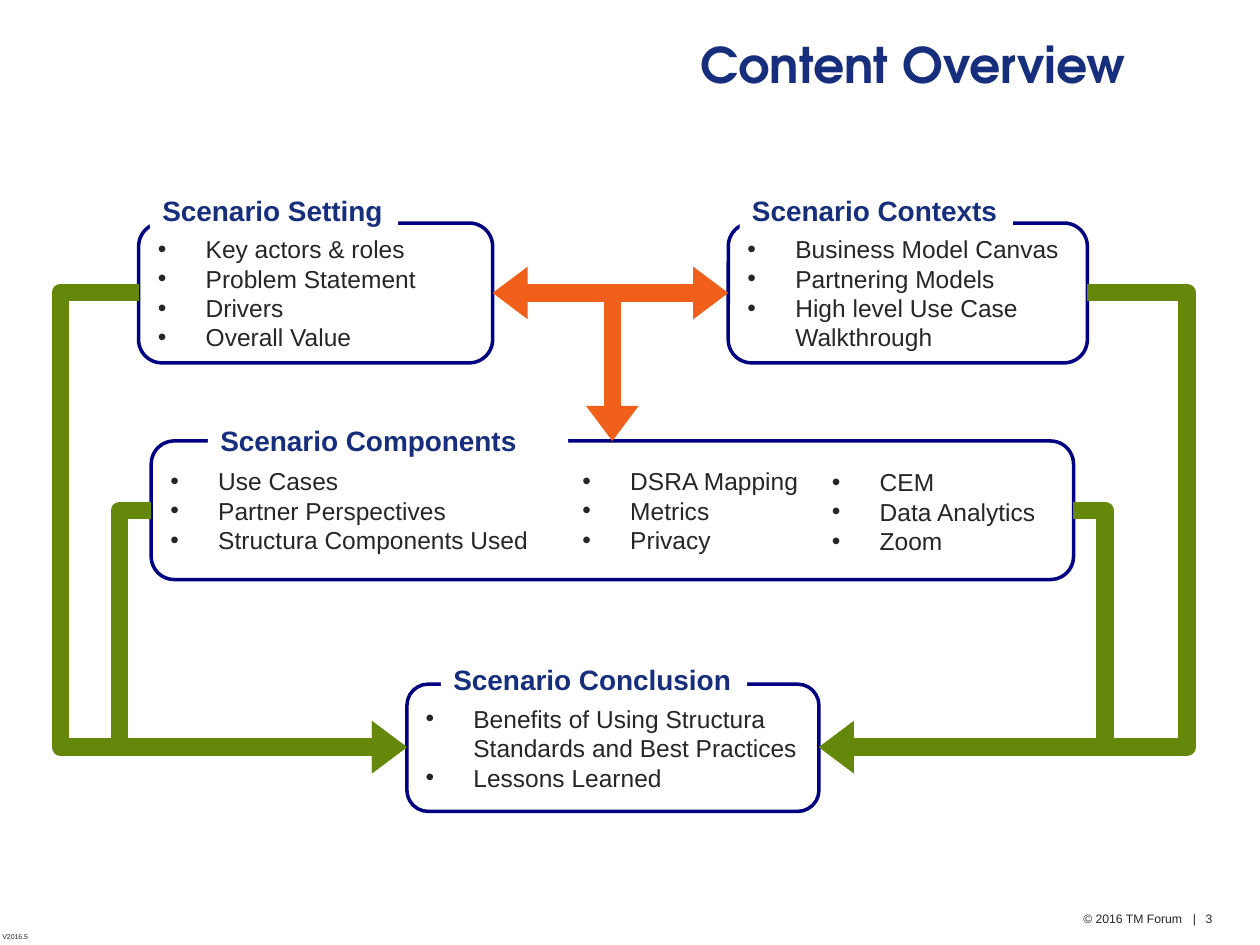
import pptx
import pptx.dml.color
import pptx.enum.shapes
import pptx.enum.text
import pptx.oxml
import pptx.oxml.ns
import pptx.util

Inches = pptx.util.Inches
Pt = pptx.util.Pt
MSO_SHAPE = pptx.enum.shapes.MSO_SHAPE
MSO_CONNECTOR = pptx.enum.shapes.MSO_CONNECTOR
PP_ALIGN = pptx.enum.text.PP_ALIGN
MSO_ANCHOR = pptx.enum.text.MSO_ANCHOR

COLORS = {
    "title": "172E7D",
    "text": "262626",
    "border": "000080",
    "panel": "FFFFFF",
    "flow": "65880A",
    "link": "F0601A",
}


def rgb(name):
    return pptx.dml.color.RGBColor.from_string(COLORS[name])


def add_xml(parent, xml):
    parent.append(pptx.oxml.parse_xml(xml.replace(">", f" {pptx.oxml.ns.nsdecls('a')}>", 1)))


def add_run(p, text, size, color="text", bold=False, font="Arial"):
    r = p.add_run()
    r.text = text
    r.font.size = Pt(size)
    r.font.name = font
    r.font.bold = bold
    r.font.color.rgb = rgb(color)


def add_text(s, box, text, size, align=PP_ALIGN.LEFT, anchor=MSO_ANCHOR.TOP, wrap=True, **style):
    sp = s.shapes.add_textbox(*map(Inches, box))
    tf = sp.text_frame
    tf.word_wrap = wrap
    tf.vertical_anchor = anchor
    p = tf.paragraphs[0]
    p.alignment = align
    add_run(p, text, size, **style)
    return sp


def add_bullets(s, box, items, framed=True):
    sp = s.shapes.add_shape(MSO_SHAPE.ROUNDED_RECTANGLE, *map(Inches, box))
    sp.shadow.inherit = False
    if framed:
        sp.fill.solid()
        sp.fill.fore_color.rgb = rgb("panel")
        sp.line.color.rgb = rgb("border")
        sp.line.width = Pt(2)
    else:
        sp.fill.background()
        sp.line.fill.background()
    tf = sp.text_frame
    tf.word_wrap = True
    tf.vertical_anchor = MSO_ANCHOR.MIDDLE
    for i, item in enumerate(items):
        p = tf.add_paragraph() if i else tf.paragraphs[0]
        p.alignment = PP_ALIGN.LEFT
        pPr = p._p.get_or_add_pPr()
        pPr.set("marL", str(Inches(0.38)))
        pPr.set("indent", str(-Inches(0.38)))
        add_xml(pPr, '<a:buFont typeface="Arial"></a:buFont>')
        add_xml(pPr, '<a:buChar char="•"></a:buChar>')
        add_run(p, item, 14)
    return sp


def add_panel(s, box, heading_box, heading, items):
    panel = add_bullets(s, box, items)
    label = add_text(s, heading_box, heading, 16, wrap=False, color="title", bold=True)
    label.fill.solid()
    label.fill.fore_color.rgb = rgb("panel")
    return panel


def add_arrow(s, kind, start, end, color, ends=("tailEnd",)):
    c = s.shapes.add_connector(kind, *map(Inches, start + end))
    c.line.color.rgb = rgb(color)
    c.line.width = Pt(10)
    ln = c.line._get_or_add_ln()
    for tag in ends:
        add_xml(ln, f'<a:{tag} type="triangle" len="sm"></a:{tag}>')
    add_xml(c._element.spPr, "<a:effectLst></a:effectLst>")
    return c


def add_flow(s, start, end, bend_x):
    c = add_arrow(s, MSO_CONNECTOR.ELBOW, start, end, "flow")
    ratio = (bend_x - start[0]) / (end[0] - start[0])
    geom = c._element.spPr.find(pptx.oxml.ns.qn("a:prstGeom"))
    for child in list(geom):
        geom.remove(child)
    add_xml(geom, f'<a:avLst><a:gd name="adj1" fmla="val {round(ratio * 100000)}"/></a:avLst>')


def add_footer(s, box):
    sp = add_text(s, box, "© 2016 TM Forum\t|\t3", 7)
    pPr = sp.text_frame.paragraphs[0]._p.get_or_add_pPr()
    stops = "".join(f'<a:tab pos="{Inches(x)}" algn="l"/>' for x in (0.87, 0.97))
    add_xml(pPr, f"<a:tabLst>{stops}</a:tabLst>")
    add_text(s, (-0.08, 7.35, 0.41, 0.24), "V2016.5", 4, wrap=False)


def add_components(s, box):
    x, y, w, h = box
    panel = add_panel(s, box, (x + 0.45, y - 0.19, 2.86, 0.37), "Scenario Components",
                      ["Use Cases", "Partner Perspectives", "Structura Components Used"])
    add_bullets(s, (x + 3.27, y, 2.18, h), ["DSRA Mapping", "Metrics", "Privacy"], framed=False)
    add_bullets(s, (x + 5.25, y + 0.01, 2.18, h), ["CEM", "Data Analytics", "Zoom"], framed=False)
    return panel


def main():
    prs = pptx.Presentation()
    prs.slide_width, prs.slide_height = Inches(10), Inches(7.5)
    s = prs.slides.add_slide(prs.slide_layouts[6])

    add_footer(s, (8.5, 7.18, 1.3, 0.22))
    add_text(s, (2.54, -0.02, 6.49, 1.06), "Content Overview", 28, PP_ALIGN.RIGHT,
             MSO_ANCHOR.MIDDLE, color="title", bold=True, font="TeX Gyre Adventor")

    setting = add_panel(s, (1.1, 1.77, 2.81, 1.11), (1.19, 1.49, 1.97, 0.37), "Scenario Setting",
                        ["Key actors & roles", "Problem Statement", "Drivers", "Overall Value"])
    contexts = add_panel(s, (5.78, 1.77, 2.85, 1.11), (5.87, 1.49, 2.17, 0.37), "Scenario Contexts",
                         ["Business Model Canvas", "Partnering Models",
                          "High level Use Case Walkthrough"])
    add_panel(s, (3.23, 5.43, 3.27, 1.01), (3.5, 5.21, 2.43, 0.37), "Scenario Conclusion",
              ["Benefits of Using Structura Standards and Best Practices", "Lessons Learned"])
    components = add_components(s, (1.2, 3.5, 7.32, 1.1))

    left_end, right_end = (3.23, 5.93), (6.5, 5.93)
    add_flow(s, (8.63, 2.32), right_end, 9.42)
    add_flow(s, (1.1, 2.32), left_end, 0.48)

    link = add_arrow(s, MSO_CONNECTOR.STRAIGHT, (3.91, 2.32), (5.78, 2.32), "link",
                     ("headEnd", "tailEnd"))
    link.begin_connect(setting, 3)
    link.end_connect(contexts, 1)
    down = add_arrow(s, MSO_CONNECTOR.STRAIGHT, (4.86, 2.32), (4.86, 3.5), "link")
    down.end_connect(components, 0)

    add_flow(s, (8.52, 4.05), right_end, 8.77)
    add_flow(s, (1.2, 4.05), left_end, 0.95)

    prs.save("out.pptx")


if __name__ == "__main__":
    main()
